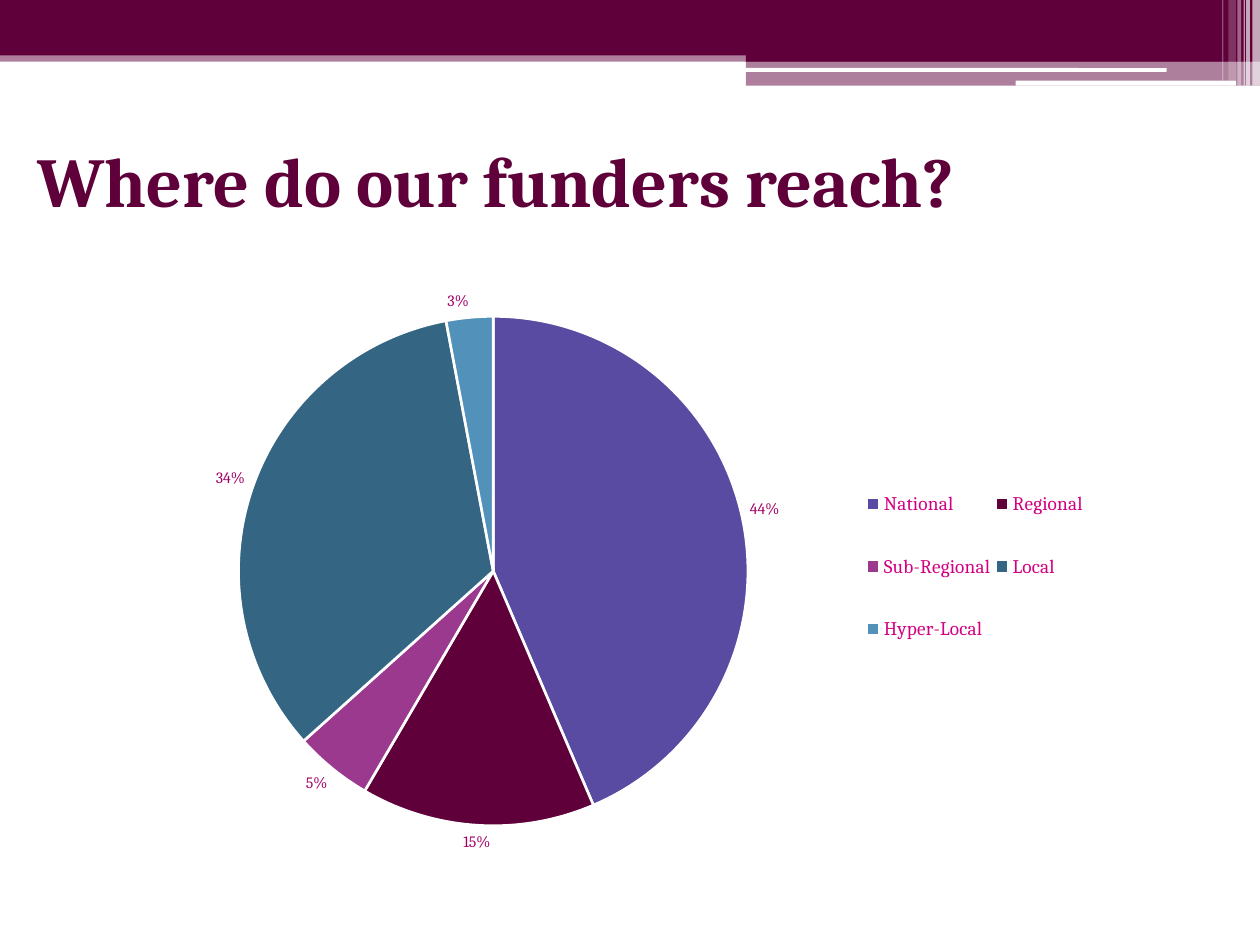
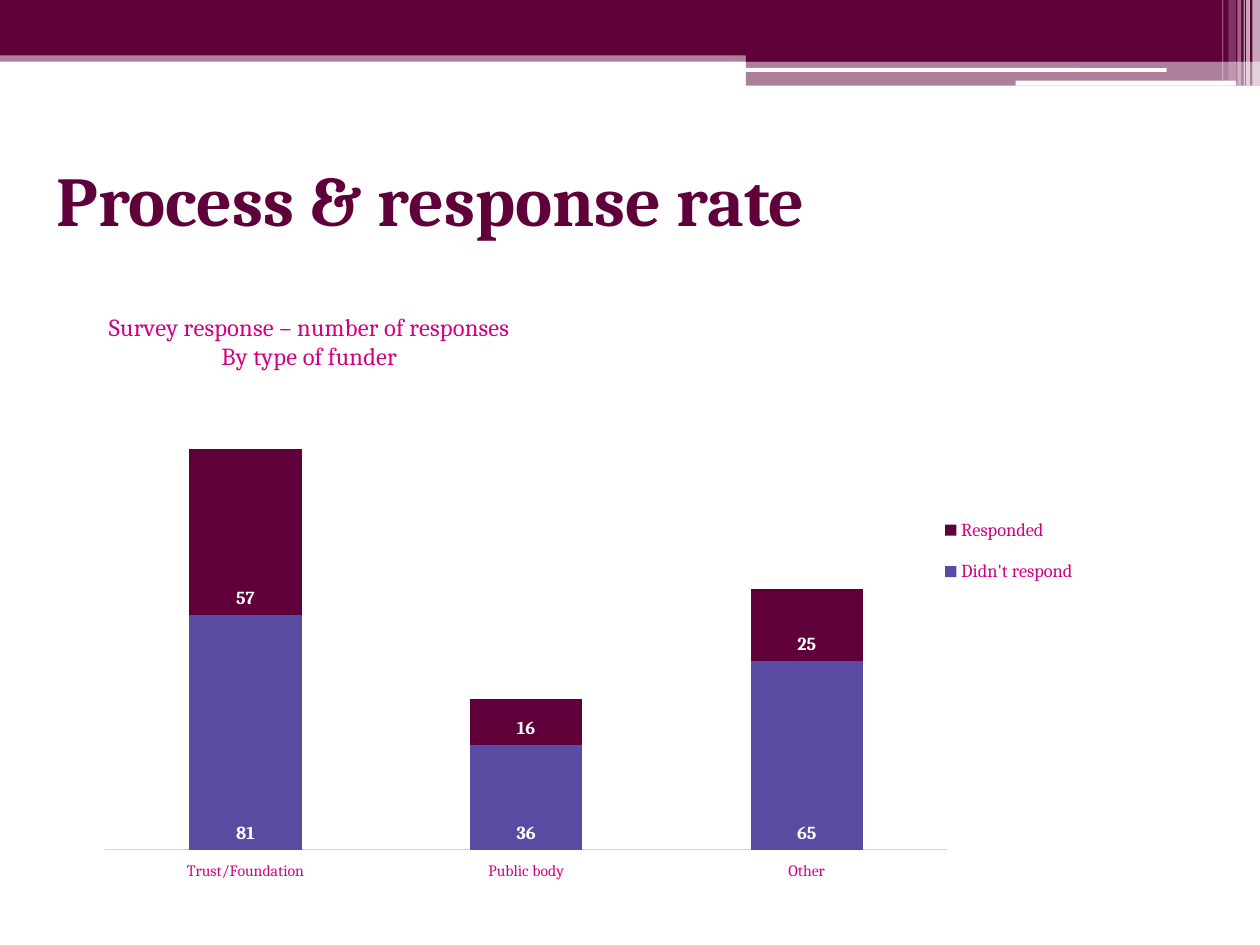
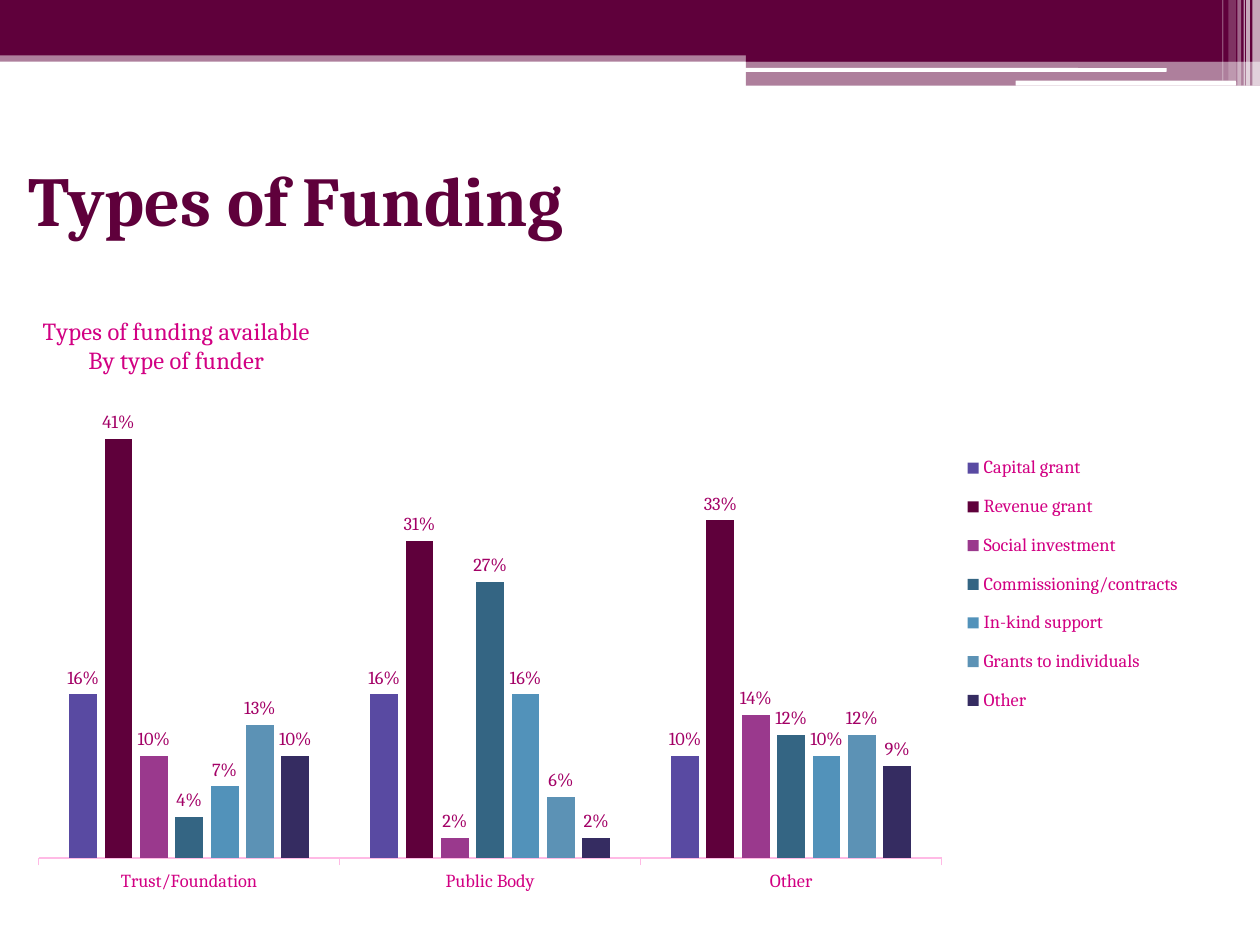
from dataclasses import dataclass

from lxml.etree import SubElement
from pptx import Presentation
from pptx.chart.data import CategoryChartData
from pptx.dml.color import RGBColor
from pptx.enum.chart import XL_CHART_TYPE, XL_LABEL_POSITION, XL_LEGEND_POSITION, XL_TICK_LABEL_POSITION, XL_TICK_MARK
from pptx.enum.shapes import MSO_SHAPE
from pptx.enum.text import MSO_ANCHOR, PP_ALIGN
from pptx.oxml import parse_xml
from pptx.oxml.ns import nsdecls, qn
from pptx.util import Inches, Pt


@dataclass(frozen=True)
class Theme:
    font: str = "Cambria"
    plum: str = "5F003B"
    white: str = "FFFFFF"
    ink: str = "30001E"
    pink: str = "D20083"
    label: str = "A30066"
    axis: str = "FFBAE5"
    palette: tuple = ("594AA2", "5F003B", "9A398D", "346583", "5292BA", "5C92B5", "352C61")
    title_size: float = 40
    chart_title_size: float = 14
    legend_size: float = 11
    text_size: float = 10.5
    chart_size: float = 10
    small_size: float = 9


class FundingDeck:
    def __init__(self, theme):
        self.theme = theme
        self.deck = Presentation()
        self.deck.slide_width = Inches(10)
        self.deck.slide_height = Inches(7.5)
        self.page = None

    def add_page(self, title, left, top):
        first = self.page is None
        self.page = self.deck.slides.add_slide(self.deck.slide_layouts[5])
        if first:
            self.add_master_bands()
        box = self.page.shapes.title
        box.left, box.top, box.width, box.height = map(Inches, (left, top, 9, 1.17))
        box.text_frame.vertical_anchor = MSO_ANCHOR.MIDDLE
        para = box.text_frame.paragraphs[0]
        para.alignment = PP_ALIGN.LEFT
        span = para.add_run()
        span.text = title
        self.style_font(span.font, self.theme.title_size, self.theme.plum, True)

    def add_master_bands(self):
        theme = self.theme
        square, rounded = MSO_SHAPE.RECTANGLE, MSO_SHAPE.ROUNDED_RECTANGLE
        bands = [
            (square, 0, 0.4, 10, 0.09, theme.plum, 50),
            (square, 0, 0, 10, 0.34, theme.plum, 100),
            (square, 0, 0.34, 10, 0.1, theme.plum, 100),
            (square, 5.92, 0.39, 4.08, 0.1, theme.plum, 100),
            (square, 5.92, 0.48, 4.08, 0.2, theme.plum, 50),
            (rounded, 5.91, 0.54, 3.35, 0.03, theme.white, 100),
            (rounded, 8.06, 0.64, 1.75, 0.04, theme.white, 100),
        ]
        stripes = [
            (9.94, 0.06, 0.68, 65), (9.89, 0.03, 0.68, 65), (9.87, 0.01, 0.68, 60),
            (9.82, 0.03, 0.68, 40), (9.75, 0.06, 0.64, 20), (9.7, 0.01, 0.64, 30),
        ]
        bands += [(square, left, 0, width, height, theme.white, opacity)
                  for left, width, height, opacity in stripes]
        tree = self.deck.slide_master.element.cSld.spTree
        for number, band in enumerate(bands):
            element = self.add_band(*band).element
            element.nvSpPr.cNvPr.set("id", str(100 + number))
            tree.insert(2 + number, element)

    def add_band(self, kind, left, top, width, height, color, opacity):
        shape = self.page.shapes.add_shape(kind, *map(Inches, (left, top, width, height)))
        shape.shadow.inherit = False
        shape.line.fill.background()
        self.fill(shape.fill, color)
        if opacity < 100:
            tint = shape.element.spPr.find(qn("a:solidFill"))[0]
            SubElement(tint, qn("a:alpha"), val=str(opacity * 1000))
        return shape

    def add_chart(self, kind, place, categories, series, plot_area, legend_area,
                  legend_size, number_format="General"):
        data = CategoryChartData(number_format=number_format)
        data.categories = categories
        for name, values in series:
            data.add_series(name, values)
        chart = self.page.shapes.add_chart(kind, *map(Inches, place), data).chart
        self.style_font(chart.font, self.theme.chart_size, self.theme.ink)
        chart.has_title = False
        chart.has_legend = True
        chart.legend.position = XL_LEGEND_POSITION.RIGHT
        chart.legend.include_in_layout = False
        self.style_font(chart.legend.font, legend_size, self.theme.pink)
        self.set_layout(chart, "c:plotArea", 0, plot_area)
        self.set_layout(chart, "c:legend", 1, legend_area)
        return chart

    def add_pie(self, place, categories, series, plot_area, legend_area):
        chart = self.add_chart(XL_CHART_TYPE.PIE, place, categories, [series],
                               plot_area, legend_area, self.theme.legend_size)
        plot = chart.plots[0]
        plot.vary_by_categories = True
        slices = plot.series[0]
        for index, color in enumerate(self.theme.palette[:len(categories)]):
            point = slices.points[index].format
            self.fill(point.fill, color)
            self.fill(point.line.fill, self.theme.white)
            point.line.width = Pt(1.5)
        labels = self.add_labels(slices, XL_LABEL_POSITION.OUTSIDE_END,
                                 self.theme.small_size, self.theme.label)
        labels.show_value = False
        labels.show_percentage = True
        labels.number_format = "0%"
        labels.number_format_is_linked = False

    def add_columns(self, kind, place, categories, series, plot_area, legend_area, title,
                    title_place, maximum, gap, overlap, axis_size, tick, colors,
                    label_position, label_color, label_bold=False, number_format="General"):
        chart = self.add_chart(kind, place, categories, series, plot_area, legend_area,
                               self.theme.text_size, number_format)
        self.add_chart_title(chart, title, title_place)
        plot = chart.plots[0]
        plot.vary_by_categories = False
        plot.gap_width, plot.overlap = gap, overlap
        for columns, color in zip(plot.series, colors):
            self.fill(columns.format.fill, color)
            labels = self.add_labels(columns, label_position, self.theme.text_size,
                                     label_color, label_bold)
            labels.number_format = number_format
            labels.number_format_is_linked = False
        values = chart.value_axis
        values.visible = False
        values.has_major_gridlines = False
        values.minimum_scale, values.maximum_scale = 0, maximum
        axis = chart.category_axis
        axis.major_tick_mark = tick
        axis.minor_tick_mark = XL_TICK_MARK.NONE
        axis.tick_label_position = XL_TICK_LABEL_POSITION.LOW
        self.style_font(axis.tick_labels.font, axis_size, self.theme.pink)
        self.fill(axis.format.line.fill, self.theme.axis)
        axis.format.line.width = Pt(0.75)

    def add_chart_title(self, chart, lines, place):
        chart.has_title = True
        frame = chart.chart_title.text_frame
        for index, line in enumerate(lines):
            para = frame.add_paragraph() if index else frame.paragraphs[0]
            para.alignment = PP_ALIGN.CENTER
            span = para.add_run()
            span.text = line
            self.style_font(span.font, self.theme.chart_title_size, self.theme.pink)
        chart.chart_title.include_in_layout = False
        self.set_layout(chart, "c:title", 1, place)

    def add_labels(self, series, position, size, color, bold=False):
        labels = series.data_labels
        labels.show_value = True
        labels.position = position
        self.style_font(labels.font, size, color, bold)
        return labels

    def style_font(self, font, size, color, bold=False):
        font.name, font.size, font.bold = self.theme.font, Pt(size), bold
        font.color.rgb = RGBColor.from_string(color)

    @staticmethod
    def fill(target, color):
        target.solid()
        target.fore_color.rgb = RGBColor.from_string(color)

    @staticmethod
    def set_layout(chart, part, position, area):
        parent = chart.element.xpath(f"c:chart/{part}")[0]
        for previous in parent.findall(qn("c:layout")):
            parent.remove(previous)
        layout = parse_xml(f"<c:layout {nsdecls('c')}><c:manualLayout/></c:layout>")
        manual = layout[0]
        if part == "c:plotArea":
            SubElement(manual, qn("c:layoutTarget"), val="inner")
        for axis in "xy":
            SubElement(manual, qn(f"c:{axis}Mode"), val="edge")
        for side, value in zip("xywh", area):
            SubElement(manual, qn(f"c:{side}"), val=str(value))
        parent.insert(position, layout)


def main():
    theme = Theme()
    funding = FundingDeck(theme)

    funding.add_page("Where do our funders reach?", 0.2, 0.84)
    funding.add_pie(
        (0, 2.18, 9, 4.73),
        ["National", "Regional", "Sub-Regional", "Local", "Hyper-Local"],
        ("Series 1", (44, 15, 5, 34, 3)),
        plot_area=(0.21, 0.07, 0.45, 0.855), legend_area=(0.76, 0.3, 0.2, 0.38))

    funding.add_page("Process & response rate", 0.35, 0.99)
    funding.add_columns(
        XL_CHART_TYPE.COLUMN_STACKED, (0.67, 2.25, 8.2, 4.77),
        ["Trust/Foundation", "Public body", "Other"],
        [("Didn't respond", (81, 36, 65)), ("Responded", (57, 16, 25))],
        plot_area=(0.02, 0.17, 0.815, 0.772), legend_area=(0.82, 0.36, 0.15, 0.17),
        title=["Survey response – number of responses", "By type of funder"],
        title_place=(0.02, 0.04), maximum=160, gap=150, overlap=100,
        axis_size=theme.small_size, tick=XL_TICK_MARK.NONE, colors=theme.palette,
        label_position=XL_LABEL_POSITION.INSIDE_BASE, label_color=theme.white,
        label_bold=True)

    funding.add_page("Types of Funding", 0.13, 0.99)
    funding.add_columns(
        XL_CHART_TYPE.COLUMN_CLUSTERED, (0.12, 2.33, 9.38, 4.86),
        ["Trust/Foundation", "Public Body", "Other"],
        [
            ("Capital grant", (0.16, 0.16, 0.1)),
            ("Revenue grant", (0.41, 0.31, 0.33)),
            ("Social investment", (0.1, 0.02, 0.14)),
            ("Commissioning/contracts", (0.04, 0.27, 0.12)),
            ("In-kind support", (0.07, 0.16, 0.1)),
            ("Grants to individuals", (0.13, 0.06, 0.12)),
            ("Other", (0.1, 0.02, 0.09)),
        ],
        plot_area=(0.02, 0.17, 0.764, 0.752), legend_area=(0.8, 0.24, 0.19, 0.47),
        title=["Types of funding available", "By type of funder"],
        title_place=(0.02, 0.03), maximum=0.45, gap=219, overlap=-27,
        axis_size=theme.text_size, tick=XL_TICK_MARK.OUTSIDE, colors=theme.palette,
        label_position=XL_LABEL_POSITION.OUTSIDE_END, label_color=theme.label,
        number_format="0%")

    funding.deck.save("out.pptx")


if __name__ == "__main__":
    main()
